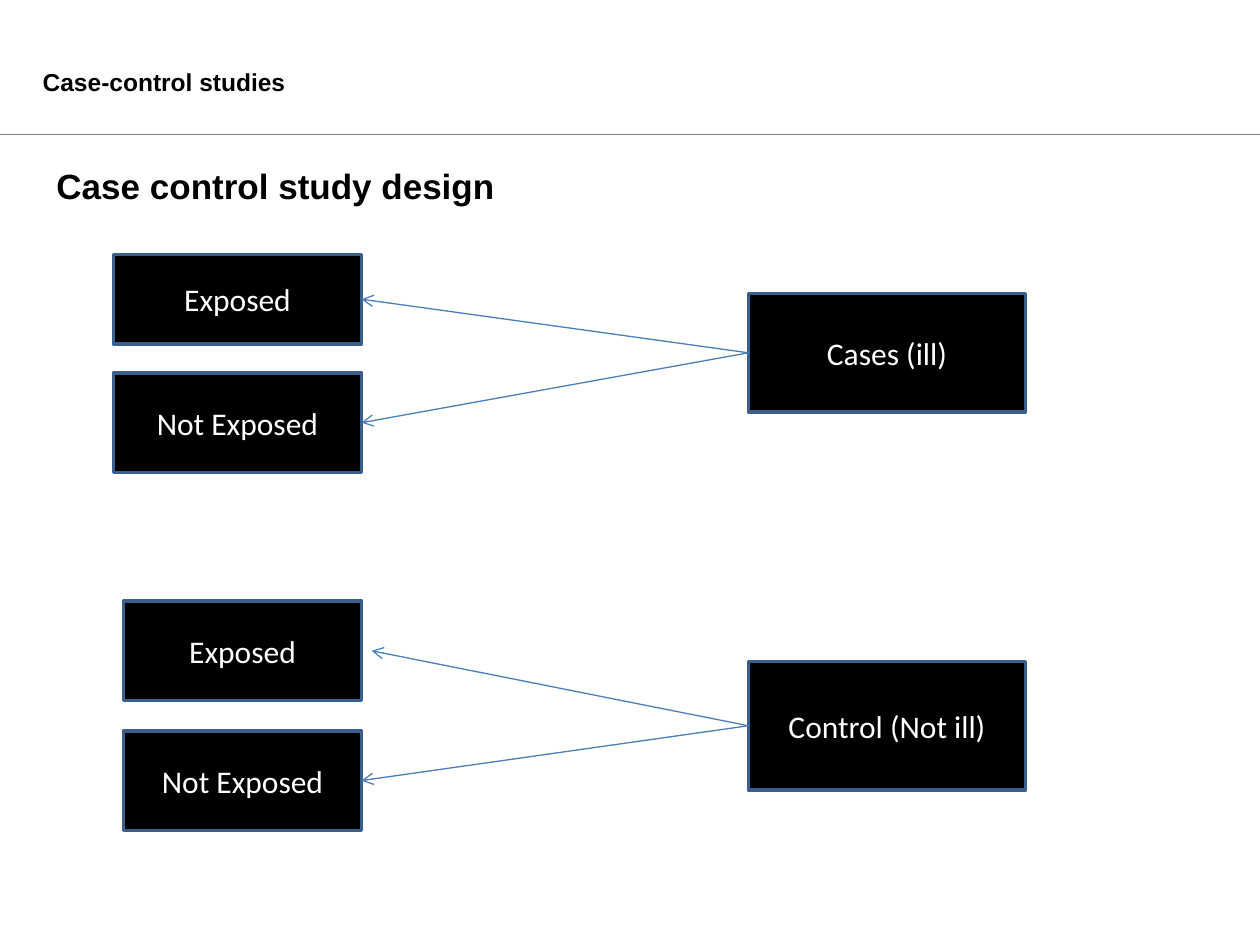
from dataclasses import dataclass

from lxml.etree import SubElement
from pptx import Presentation
from pptx.dml.color import RGBColor
from pptx.enum.shapes import MSO_CONNECTOR, MSO_SHAPE
from pptx.enum.text import MSO_ANCHOR, PP_ALIGN
from pptx.oxml.ns import qn
from pptx.util import Inches, Pt

COLS, ROWS = 100, 75
LEFT_SIDE, RIGHT_SIDE = 1, 3  # connection sites of a rectangle


@dataclass(frozen=True)
class Theme:
    heading_font: str = "Arial"
    body_font: str = "Calibri"
    text: str = "000000"
    box_fill: str = "000000"
    box_line: str = "3A5F8C"
    box_text: str = "FFFFFF"
    arrow: str = "4B7EBC"
    rule: str = "7F7F7F"
    header_size: float = 14
    title_size: float = 20
    box_size: float = 18
    thin: float = 0.75
    thick: float = 2


class Deck:
    """Draws on the current slide; lengths are grid columns and rows."""

    def __init__(self, theme):
        self.theme = theme
        self.prs = Presentation()
        self.prs.slide_width, self.prs.slide_height = Inches(10), Inches(7.5)
        self.s = self.prs.slides.add_slide(self.prs.slide_layouts[6])

    def x(self, cols):
        return round(self.prs.slide_width * cols / COLS)

    def y(self, rows):
        return round(self.prs.slide_height * rows / ROWS)

    def area(self, left, top, width, height):
        return self.x(left), self.y(top), self.x(width), self.y(height)

    def add_text(self, tf, text, font, size, color, bold=False, align=PP_ALIGN.LEFT):
        tf.vertical_anchor = MSO_ANCHOR.MIDDLE
        p = tf.paragraphs[0]
        p.alignment = align
        r = p.add_run()
        r.text = text
        r.font.name, r.font.size, r.font.bold = font, Pt(size), bold
        r.font.color.rgb = RGBColor.from_string(color)

    def heading(self, text, at, size, wrap=True):
        tf = self.s.shapes.add_textbox(*self.area(*at)).text_frame
        tf.word_wrap = wrap
        self.add_text(tf, text, self.theme.heading_font, size, self.theme.text, bold=True)

    def box(self, text, *at):
        t = self.theme
        sp = self.s.shapes.add_shape(MSO_SHAPE.RECTANGLE, *self.area(*at))
        sp.shadow.inherit = False
        sp.fill.solid()
        sp.fill.fore_color.rgb = RGBColor.from_string(t.box_fill)
        sp.line.color.rgb = RGBColor.from_string(t.box_line)
        sp.line.width = Pt(t.thick)
        self.add_text(sp.text_frame, text, t.body_font, t.box_size, t.box_text,
                      align=PP_ALIGN.CENTER)
        return sp

    def line(self, start, end, color):
        cn = self.s.shapes.add_connector(
            MSO_CONNECTOR.STRAIGHT, self.x(start[0]), self.y(start[1]),
            self.x(end[0]), self.y(end[1]))
        cn.line.color.rgb = RGBColor.from_string(color)
        cn.line.width = Pt(self.theme.thin)
        SubElement(cn._element.spPr, qn("a:effectLst"))
        return cn

    def arrow(self, source, target, gap=0):
        """Arrow from the left of source to the right of target, or gap columns short."""
        cn = self.line((0, 0), (0, 0), self.theme.arrow)
        cn.begin_connect(source, LEFT_SIDE)
        if gap:
            cn.end_x = target.left + target.width + self.x(gap)
            cn.end_y = target.top + target.height // 2
        else:
            cn.end_connect(target, RIGHT_SIDE)
        SubElement(cn._element.spPr.find(qn("a:ln")), qn("a:tailEnd"), type="arrow")


def main():
    theme = Theme()
    deck = Deck(theme)
    deck.line((0, 10.7), (COLS, 10.7), theme.rule)
    deck.heading("Case-control studies", (2.4, 4.8, 21.4, 3.4),
                 theme.header_size, wrap=False)
    deck.heading("Case control study design", (3.5, 8.5, 90, 12.5), theme.title_size)

    # group, its top and height; left and width of its exposures; their
    # labels with top, height and the gap left before the arrowhead
    groups = [
        ("Cases (ill)", 23.3, 9.4, 9, 19.7,
         [("Exposed", 20.2, 7.1, 0), ("Not Exposed", 29.6, 7.9, 0)]),
        ("Control (Not ill)", 52.5, 10.2, 9.8, 18.9,
         [("Exposed", 47.7, 7.9, 0.8), ("Not Exposed", 58, 7.9, 0)]),
    ]
    for name, top, height, left, width, exposures in groups:
        group = deck.box(name, 59.4, top, 22, height)
        for label, row, rows, gap in exposures:
            deck.arrow(group, deck.box(label, left, row, width, rows), gap)

    deck.prs.save("out.pptx")


if __name__ == "__main__":
    main()
